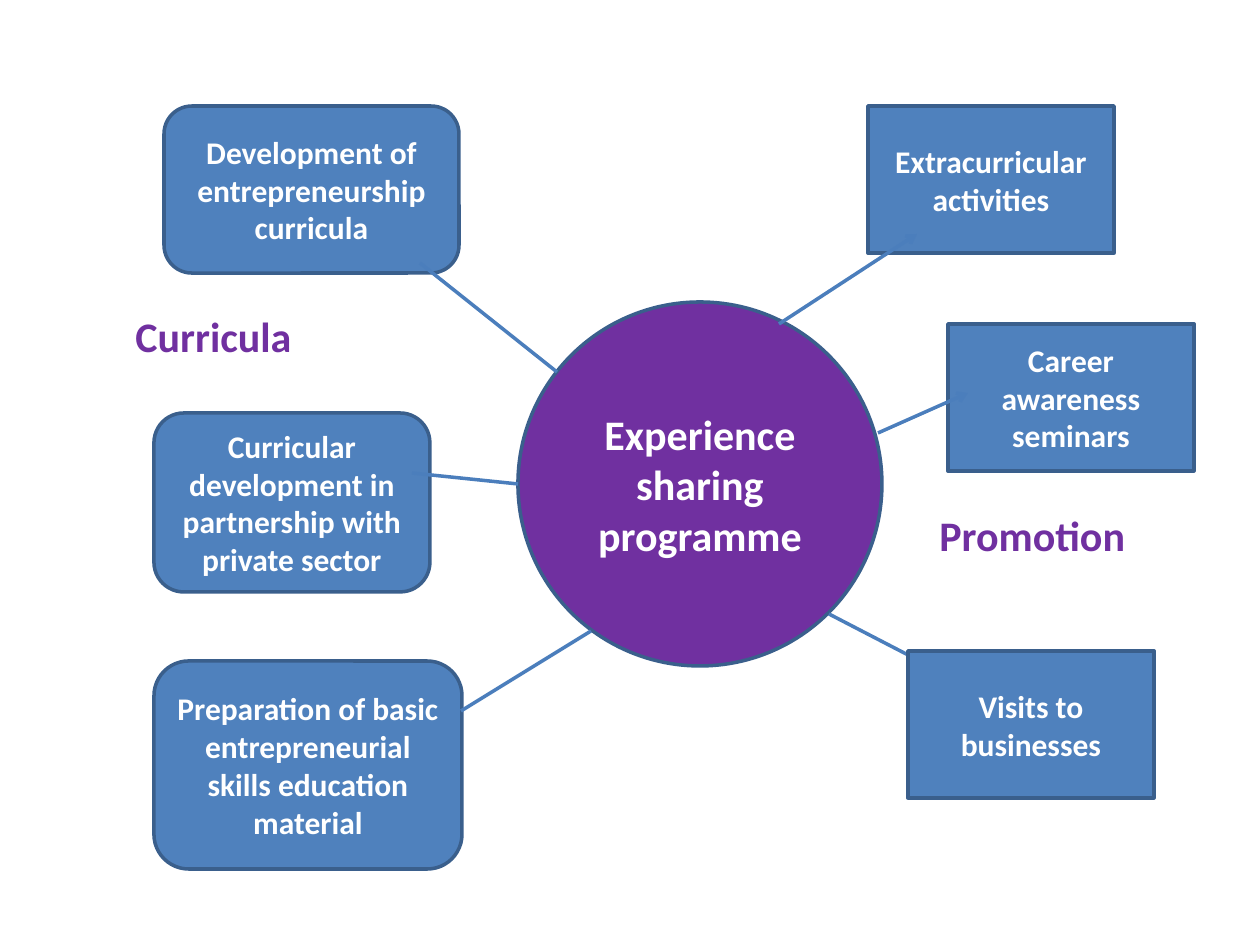
from lxml import etree
from pptx import Presentation
from pptx.dml.color import RGBColor
from pptx.enum.shapes import MSO_CONNECTOR, MSO_SHAPE
from pptx.enum.text import MSO_ANCHOR, MSO_AUTO_SIZE, PP_ALIGN
from pptx.oxml.ns import qn
from pptx.util import Emu, Inches, Pt

PURPLE = RGBColor(0x70, 0x30, 0xA0)
BLUE = RGBColor(0x4F, 0x81, 0xBD)
OUTLINE = RGBColor(0x3A, 0x5F, 0x8C)
LINK = RGBColor(0x4B, 0x7E, 0xBC)
WHITE = RGBColor(0xFF, 0xFF, 0xFF)
PX_PER_INCH = 126
CARD_SIZE = (246, 147)


def px(*values):
    return [Emu(round(v * Inches(1) / PX_PER_INCH)) for v in values]


class Diagram:
    font = "Calibri"
    line_width = Pt(2)

    def __init__(self, slide):
        self.slide = slide

    def add_text(self, tf, text, size, color, align):
        tf.word_wrap = True
        p = tf.paragraphs[0]
        p.alignment = align
        r = p.add_run()
        r.text = text
        r.font.name = self.font
        r.font.size = Pt(size)
        r.font.bold = True
        r.font.color.rgb = color

    def node(self, kind, x, y, w, h, text, fill=BLUE, size=18):
        sp = self.slide.shapes.add_shape(kind, *px(x, y, w, h))
        sp.shadow.inherit = False
        sp.fill.solid()
        sp.fill.fore_color.rgb = fill
        sp.line.color.rgb = OUTLINE
        sp.line.width = self.line_width
        sp.text_frame.vertical_anchor = MSO_ANCHOR.MIDDLE
        self.add_text(sp.text_frame, text, size, WHITE, PP_ALIGN.CENTER)

    def curriculum(self, x, y, w, h, text):
        self.node(MSO_SHAPE.ROUNDED_RECTANGLE, x, y, w, h, text)

    def promotion(self, x, y, text):
        self.node(MSO_SHAPE.RECTANGLE, x, y, *CARD_SIZE, text)

    def label(self, x, y, w, h, text):
        tf = self.slide.shapes.add_textbox(*px(x, y, w, h)).text_frame
        self.add_text(tf, text, 24, PURPLE, PP_ALIGN.LEFT)
        tf.auto_size = MSO_AUTO_SIZE.SHAPE_TO_FIT_TEXT

    def link(self, x1, y1, x2, y2, arrow=False):
        cn = self.slide.shapes.add_connector(
            MSO_CONNECTOR.STRAIGHT, *px(x1, y1, x2, y2))
        cn.line.color.rgb = LINK
        cn.line.width = self.line_width
        sp_pr = cn._element.spPr
        if arrow:
            ln = sp_pr.find(qn("a:ln"))
            etree.SubElement(ln, qn("a:tailEnd"), type="arrow")
        etree.SubElement(sp_pr, qn("a:effectLst"))


def main():
    prs = Presentation()
    prs.slide_width, prs.slide_height = Inches(10), Inches(7.5)
    s = Diagram(prs.slides.add_slide(prs.slide_layouts[6]))

    s.node(MSO_SHAPE.OVAL, 518, 302, 364, 364,
           "Experience sharing programme", PURPLE, 24)
    s.curriculum(164, 106, 295, 167, "Development of entrepreneurship curricula")
    s.curriculum(154, 413, 276, 179,
                 "Curricular development in partnership with private sector")
    s.promotion(868, 106, "Extracurricular activities")
    s.link(420, 263, 557, 372)
    s.link(412, 473, 518, 484)
    s.link(779, 324, 917, 234, arrow=True)
    s.link(829, 614, 997, 701, arrow=True)
    s.label(123, 304, 324, 63, "Curricula")
    s.promotion(948, 324, "Career awareness seminars")
    s.link(878, 433, 968, 393, arrow=True)
    s.label(927, 503, 217, 63, "Promotion")
    s.curriculum(154, 661, 308, 208,
                 "Preparation of basic entrepreneurial skills education material")
    s.link(461, 711, 591, 631)
    s.promotion(908, 651, "Visits to businesses")

    prs.save("out.pptx")


if __name__ == "__main__":
    main()
